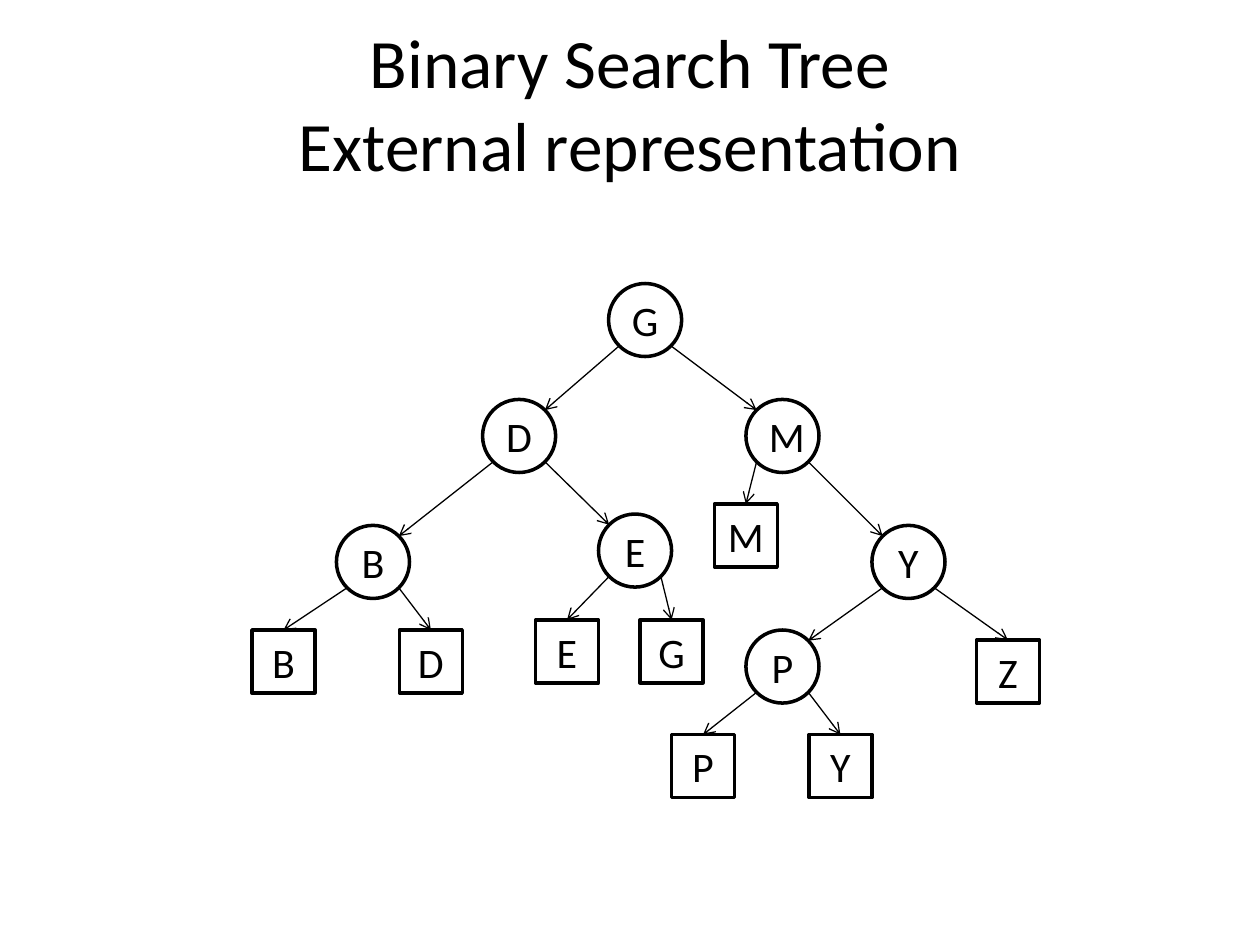
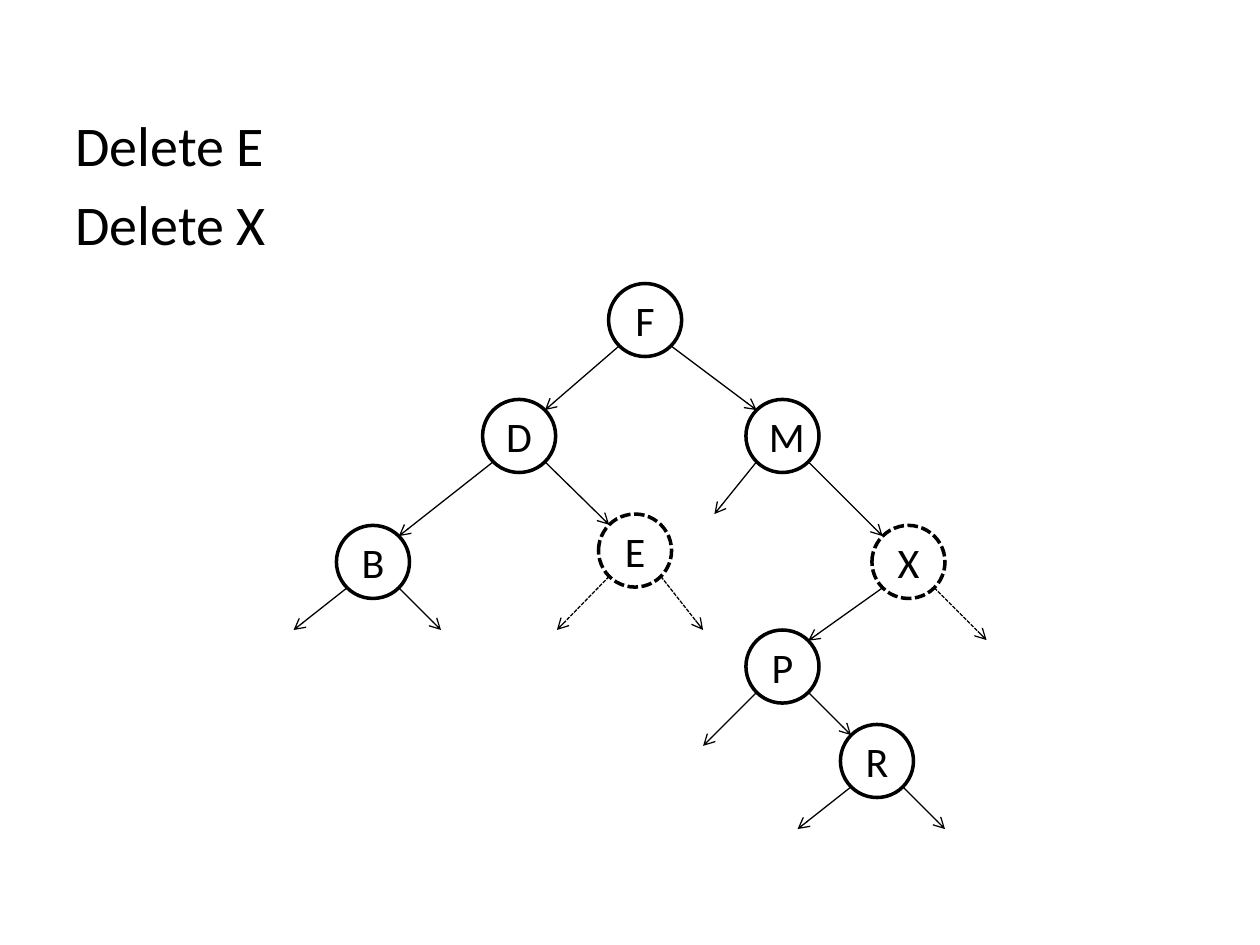
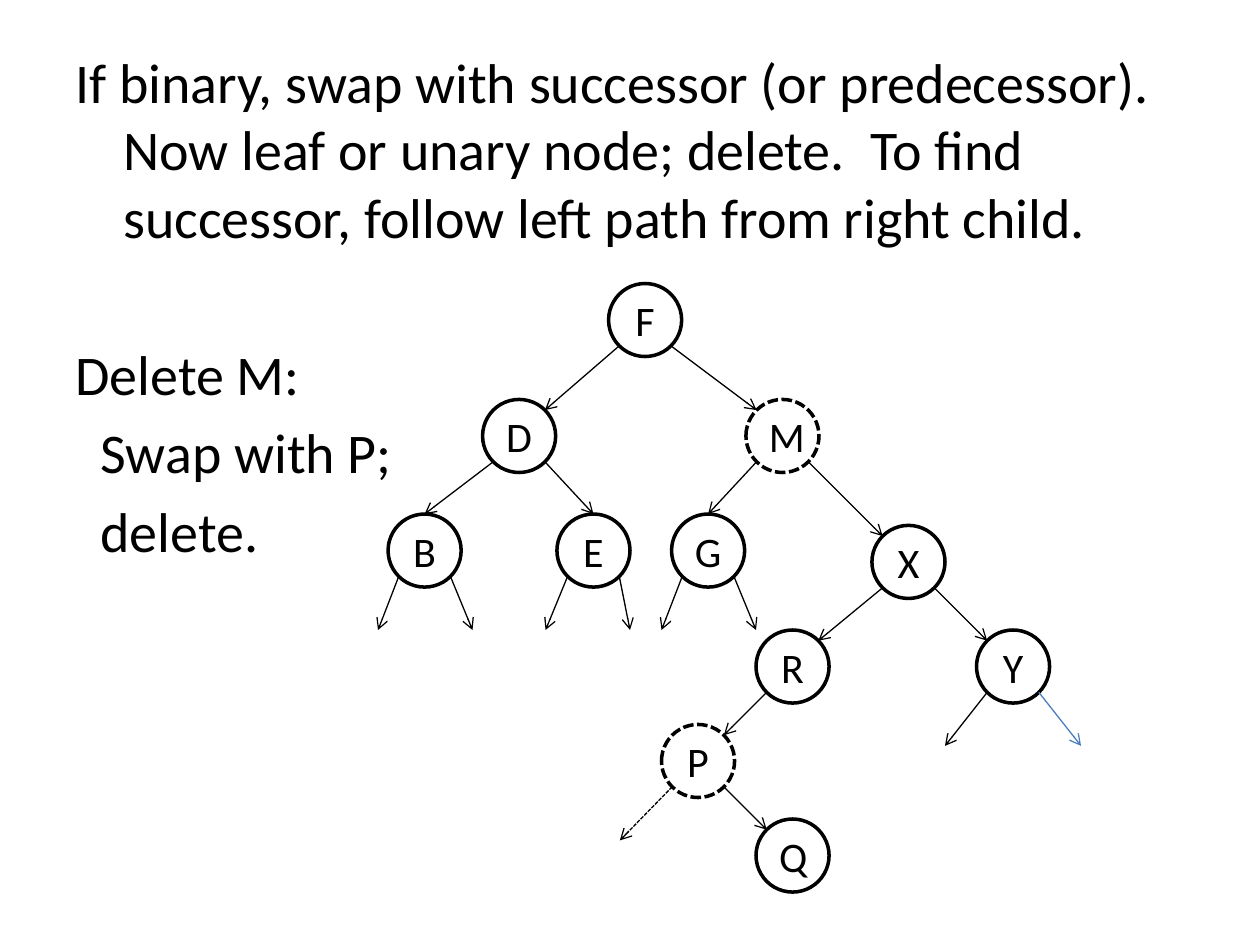
"""Build three slides on binary search trees: leaves, and deletion by case."""
from lxml import etree
from pptx import Presentation
from pptx import util as u
from pptx.dml.color import RGBColor
from pptx.enum import dml, shapes, text
from pptx.oxml import ns

FONT = "Calibri"
BLACK, WHITE, BLUE = "000000", "FFFFFF", "4B7EBC"
TITLE_SIZE, BODY_SIZE, KEY_SIZE = 39.6, 32, 24
NODE, LEAF = 0.58, 0.5
CORNER = NODE * (1 - 0.5 ** 0.5) / 2
HANG, STEP = 0.38, 0.2
GAP, WIDE_GAP = 6.4, 51.4

TITLE = ["Binary Search Tree", "External representation"]

SLIDES = [
    dict(
        title=TITLE,
        nodes={"G": (4.83, 2.25), "M": (5.92, 3.17), "Y": (6.92, 4.17),
               "P": (5.92, 5), "D": (3.83, 3.17), "B": (2.67, 4.17),
               "E": (4.75, 4.08)},
        links=["G<D", "D<B", "D>E", "G>M", "M>Y", "Y<P"],
        leaves=[("B<", "B", 2, 5), ("B>", "D", 3.17, 5),
                ("E<", "E", 4.25, 4.92), ("E>", "G", 5.08, 4.92),
                ("P<", "P", 5.33, 5.83), ("P>", "Y", 6.42, 5.83),
                ("M<", "M", 5.67, 4), ("Y>", "Z", 7.75, 5.08)],
    ),
    dict(
        body=dict(at=(0.5, 0.83, 9, 1.5),
                  lines=[("Delete E", HANG, -HANG, GAP),
                         ("Delete X", HANG, -HANG, GAP)]),
        nodes={"F": (4.83, 2.25), "M": (5.92, 3.17), "X": (6.92, 4.17),
               "P": (5.92, 5), "D": (3.83, 3.17), "B": (2.67, 4.17),
               "E": (4.75, 4.08), "R": (6.67, 5.75)},
        deleted="EX",
        links=["F<D", "D<B", "D>E", "F>M", "M>X", "X<P", "P>R"],
        empties=[("B<", 2.33, 5), ("B>", 3.5, 5), ("E<", 4.42, 5),
                 ("E>", 5.58, 5), ("M<", 5.67, 4.08), ("X>", 7.83, 5.08),
                 ("P<", 5.58, 5.92), ("R<", 6.33, 6.58), ("R>", 7.5, 6.58)],
    ),
    dict(
        body=dict(at=(0.5, 0.33, 9, 4.5),
                  lines=[("If binary, swap with successor (or predecessor).  Now leaf "
                          "or unary node; delete.  To find successor, follow left path "
                          "from right child.", HANG, -HANG, GAP),
                         ("Delete M:", HANG, -HANG, WIDE_GAP),
                         ("Swap with P;", STEP, 0, GAP),
                         ("delete.", STEP, 0, GAP)]),
        nodes={"F": (4.83, 2.25), "M": (5.92, 3.17), "X": (6.92, 4.17),
               "R": (6, 5), "D": (3.83, 3.17), "B": (3.08, 4.08),
               "E": (4.42, 4.08), "P": (5.25, 5.75), "Q": (6, 6.5),
               "Y": (7.75, 5), "G": (5.33, 4.08)},
        deleted="MP",
        top_entry="BEG",
        links=["F<D", "D<B", "D>E", "F>M", "M>X", "X<R", "R<P", "P>Q", "X>Y", "M<G"],
        empties=[("B<", 3, 5), ("B>", 3.75, 5), ("E<", 4.33, 5), ("E>", 5, 5),
                 ("G<", 5.25, 5), ("G>", 6, 5), ("P<", 4.92, 6.67),
                 ("Y<", 7.5, 5.92), ("Y>", 8.58, 5.92)],
        accent="Y>",
    ),
]


def rgb(color):
    return RGBColor.from_string(color)


def add_run(paragraph, words, size):
    run = paragraph.add_run()
    run.text = words
    run.font.name, run.font.size = FONT, u.Pt(size)
    run.font.color.rgb = rgb(BLACK)


def style_line(line, color, width, dashed):
    line.color.rgb = rgb(color)
    line.width = u.Pt(width)
    if dashed:
        line.dash_style = dml.MSO_LINE.SQUARE_DOT


def add_key(slide, kind, key, x, y, size, dashed=False):
    box = slide.shapes.add_shape(kind, *map(u.Inches, (x, y, size, size)))
    box.shadow.inherit = False
    box.fill.solid()
    box.fill.fore_color.rgb = rgb(WHITE)
    style_line(box.line, BLACK, 2, dashed)
    box.text_frame.vertical_anchor = text.MSO_ANCHOR.MIDDLE
    paragraph = box.text_frame.paragraphs[0]
    paragraph.alignment = text.PP_ALIGN.CENTER
    add_run(paragraph, key, KEY_SIZE)


def add_arrow(slide, start, end, color=BLACK, dashed=False):
    arrow = slide.shapes.add_connector(
        shapes.MSO_CONNECTOR.STRAIGHT, *map(u.Inches, (*start, *end)))
    style_line(arrow.line, color, 0.75, dashed)
    properties = arrow.line._get_or_add_ln()
    etree.SubElement(properties, ns.qn("a:tailEnd"), type="arrow")
    etree.SubElement(arrow._element.spPr, ns.qn("a:effectLst"))


def add_frame(slide, at):
    frame = slide.shapes.add_textbox(*map(u.Inches, at)).text_frame
    frame.word_wrap = True
    return frame


def add_title(slide, lines):
    frame = add_frame(slide, (0.5, 0.3, 9, 1.03))
    frame.vertical_anchor = text.MSO_ANCHOR.MIDDLE
    heading = frame.paragraphs[0]
    heading.alignment = text.PP_ALIGN.CENTER
    for number, words in enumerate(lines):
        if number:
            heading.add_line_break()
        add_run(heading, words, TITLE_SIZE)


def add_body(slide, at, lines):
    frame = add_frame(slide, at)
    for number, (words, margin, indent, gap) in enumerate(lines):
        paragraph = frame.add_paragraph() if number else frame.paragraphs[0]
        paragraph.space_before = u.Pt(gap)
        properties = paragraph._p.get_or_add_pPr()
        properties.set("marL", str(u.Inches(margin)))
        properties.set("indent", str(u.Inches(indent)))
        add_run(paragraph, words, BODY_SIZE)


def add_tree(slide, nodes, links, leaves=(), empties=(), deleted="", top_entry="",
             accent=""):
    def corner(key, right, bottom):
        x, y = nodes[key]
        far = NODE - CORNER
        return x + (far if right else CORNER), y + (far if bottom else CORNER)

    def exit_point(branch):
        return corner(branch[0], branch[1] == ">", True)

    for key, (x, y) in nodes.items():
        add_key(slide, shapes.MSO_SHAPE.OVAL, key, x, y, NODE, key in deleted)
    for link in links:
        child = link[2]
        if child in top_entry:
            x, y = nodes[child]
            end = x + NODE / 2, y
        else:
            end = corner(child, link[1] == "<", False)
        add_arrow(slide, exit_point(link), end)
    for branch, key, x, y in leaves:
        add_key(slide, shapes.MSO_SHAPE.RECTANGLE, key, x, y, LEAF)
        add_arrow(slide, exit_point(branch), (x + LEAF / 2, y))
    for branch, x, y in empties:
        add_arrow(slide, exit_point(branch), (x, y),
                  BLUE if branch == accent else BLACK, branch[0] in deleted)


def main():
    deck = Presentation()
    deck.slide_width, deck.slide_height = u.Inches(10), u.Inches(7.5)
    for content in SLIDES:
        slide = deck.slides.add_slide(deck.slide_layouts[6])
        tree = dict(content)
        if "title" in tree:
            add_title(slide, tree.pop("title"))
        if "body" in tree:
            add_body(slide, **tree.pop("body"))
        add_tree(slide, **tree)
    deck.save("out.pptx")


if __name__ == "__main__":
    main()
